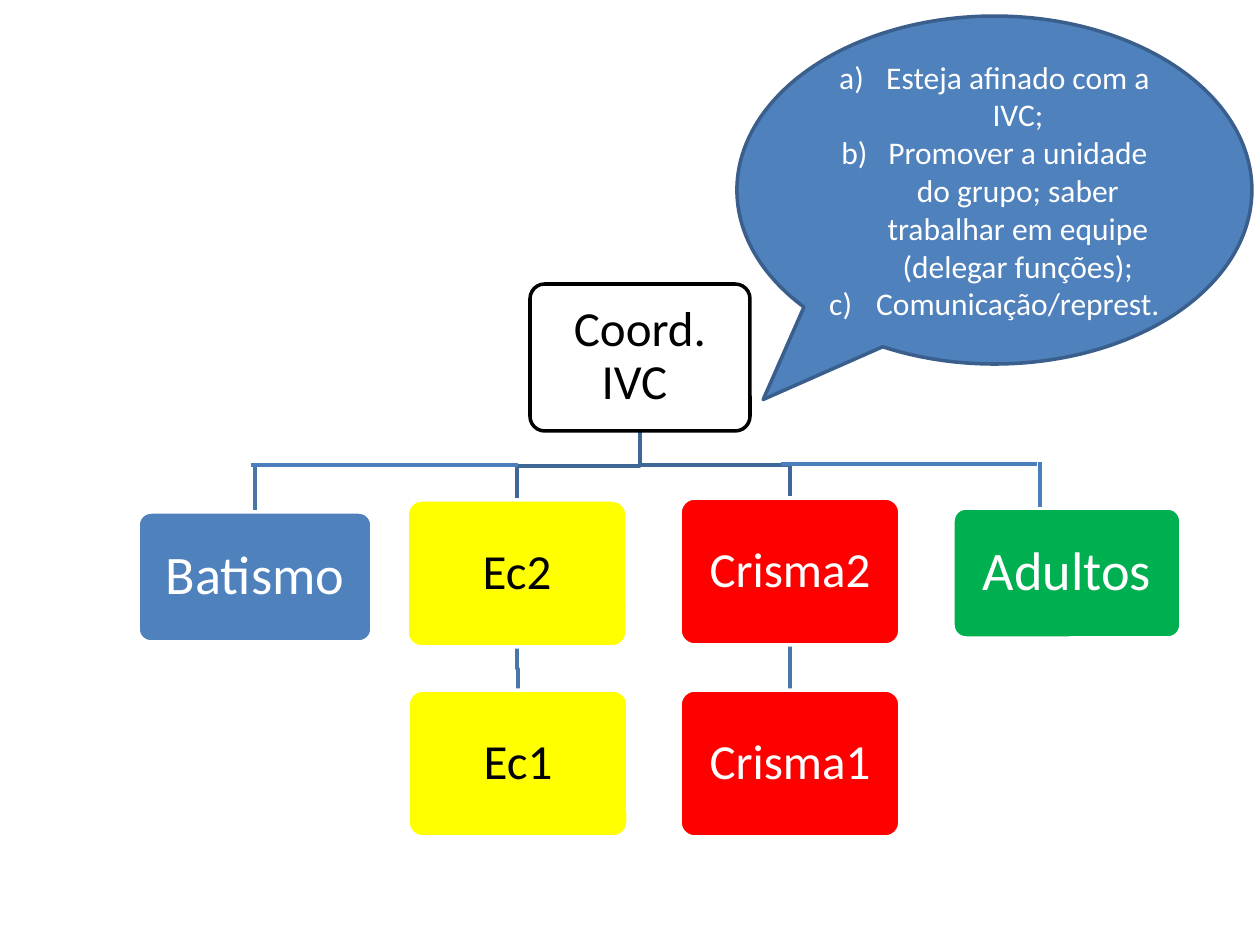
from lxml.etree import SubElement
from pptx import Presentation
from pptx.dml.color import RGBColor
from pptx.enum.shapes import MSO_CONNECTOR, MSO_SHAPE
from pptx.enum.text import MSO_ANCHOR, PP_ALIGN
from pptx.oxml.ns import qn
from pptx.util import Pt

EMU_PER_PX = 914400 / 126
TOP, BOTTOM = 0, 2
COLORS = {
    "white": "FFFFFF", "black": "000000", "yellow": "FFFF00", "red": "FF0000",
    "blue": "4F81BD", "green": "00B050", "callout edge": "3A5F8C",
    "upper link": "3F6797", "lower link": "4875AC", "branch": "4B7EBC",
}


def px(length):
    return round(length * EMU_PER_PX)


def rgb(name):
    return RGBColor.from_string(COLORS[name])


class ChartSlide:
    font_name = "Calibri"
    line_width = Pt(2)

    def __init__(self, slide):
        self.shapes = slide.shapes

    def outline(self, element, color):
        element.line.color.rgb = rgb(color)
        element.line.width = self.line_width

    def filled(self, preset, bounds, fill, edge):
        shape = self.shapes.add_shape(preset, *map(px, bounds))
        shape.shadow.inherit = False
        shape.fill.solid()
        shape.fill.fore_color.rgb = rgb(fill)
        self.outline(shape, edge)
        shape.text_frame.word_wrap = True
        shape.text_frame.vertical_anchor = MSO_ANCHOR.MIDDLE
        return shape

    def add_text(self, paragraph, text, size, color):
        paragraph.alignment = PP_ALIGN.CENTER
        run = paragraph.add_run()
        run.text = text
        run.font.name = self.font_name
        run.font.size = Pt(size)
        run.font.color.rgb = rgb(color)

    def box(self, text, bounds, fill, text_color="white", edge="white", size=28, inset=15):
        shape = self.filled(MSO_SHAPE.ROUNDED_RECTANGLE, bounds, fill, edge)
        shape.adjustments[0] = 0.1
        frame = shape.text_frame
        frame.margin_left = frame.margin_right = px(inset)
        frame.margin_top = frame.margin_bottom = px(inset)
        paragraph = frame.paragraphs[0]
        paragraph.line_spacing = 0.9
        self.add_text(paragraph, text, size, text_color)
        return shape

    def callout(self, items, bounds):
        """Draw an oval speech bubble with a lettered list."""
        shape = self.filled(MSO_SHAPE.OVAL_CALLOUT, bounds, "blue", "callout edge")
        shape.adjustments[0], shape.adjustments[1] = -0.449, 0.602
        frame = shape.text_frame
        for index, item in enumerate(items):
            paragraph = frame.add_paragraph() if index else frame.paragraphs[0]
            self.add_text(paragraph, item, 18, "white")
            properties = paragraph._p.get_or_add_pPr()
            properties.set("marL", str(px(47)))
            properties.set("indent", str(-px(47)))
            SubElement(properties, qn("a:buFont"), typeface=self.font_name)
            SubElement(properties, qn("a:buAutoNum"), type="alphaLcParenR")

    def elbow(self, start, middle_y, end, color):
        """Draw an open vertical-horizontal-vertical path."""
        builder = self.shapes.build_freeform(*start, scale=EMU_PER_PX)
        builder.add_line_segments([(start[0], middle_y), (end[0], middle_y), end], close=False)
        link = builder.convert_to_shape()
        link.shadow.inherit = False
        link.fill.background()
        self.outline(link, color)

    def line(self, start, end, color):
        link = self.shapes.add_connector(MSO_CONNECTOR.STRAIGHT, *map(px, start + end))
        SubElement(link._element.spPr, qn("a:effectLst"))
        self.outline(link, color)
        return link


def main():
    deck = Presentation()
    deck.slide_width, deck.slide_height = px(1260), px(945)
    chart = ChartSlide(deck.slides.add_slide(deck.slide_layouts[6]))

    coordination_foot = (640, 431)
    chart.elbow(coordination_foot, 466, (517, 500), "upper link")
    chart.elbow(coordination_foot, 465, (790, 498), "upper link")
    chart.elbow((517, 647), 669, (518, 690), "lower link")
    crisma_link = chart.line((790, 645), (790, 690), "lower link")
    batismo_stem = chart.line((255, 467), (255, 512), "lower link")

    chart.box("Coord. IVC ", (530, 284, 220, 147), "white", "black", edge="black")
    chart.box("Ec2", (407, 500, 220, 147), "yellow", "black")
    chart.box("Ec1", (408, 690, 220, 147), "yellow", "black")
    crisma2 = chart.box("Crisma2", (680, 498, 220, 147), "red")
    crisma1 = chart.box("Crisma1", (680, 690, 220, 147), "red")
    batismo = chart.box("Batismo", (138, 512, 234, 130), "blue", size=31, inset=14)
    chart.box("Adultos", (953, 508, 228, 130), "green", size=31, inset=14)

    crisma_link.begin_connect(crisma2, BOTTOM)
    crisma_link.end_connect(crisma1, TOP)
    batismo_stem.end_connect(batismo, TOP)

    for start, end in (
        ((251, 465), (518, 465)),
        ((1040, 507), (1040, 462)),
        ((781, 464), (1037, 464)),
    ):
        chart.line(start, end, "branch")

    chart.callout(
        (
            "Esteja afinado com a IVC;",
            "Promover a unidade do grupo; saber trabalhar em equipe (delegar funções);",
            "Comunicação/represt.",
        ),
        (737, 16, 515, 348),
    )
    deck.save("out.pptx")


if __name__ == "__main__":
    main()
